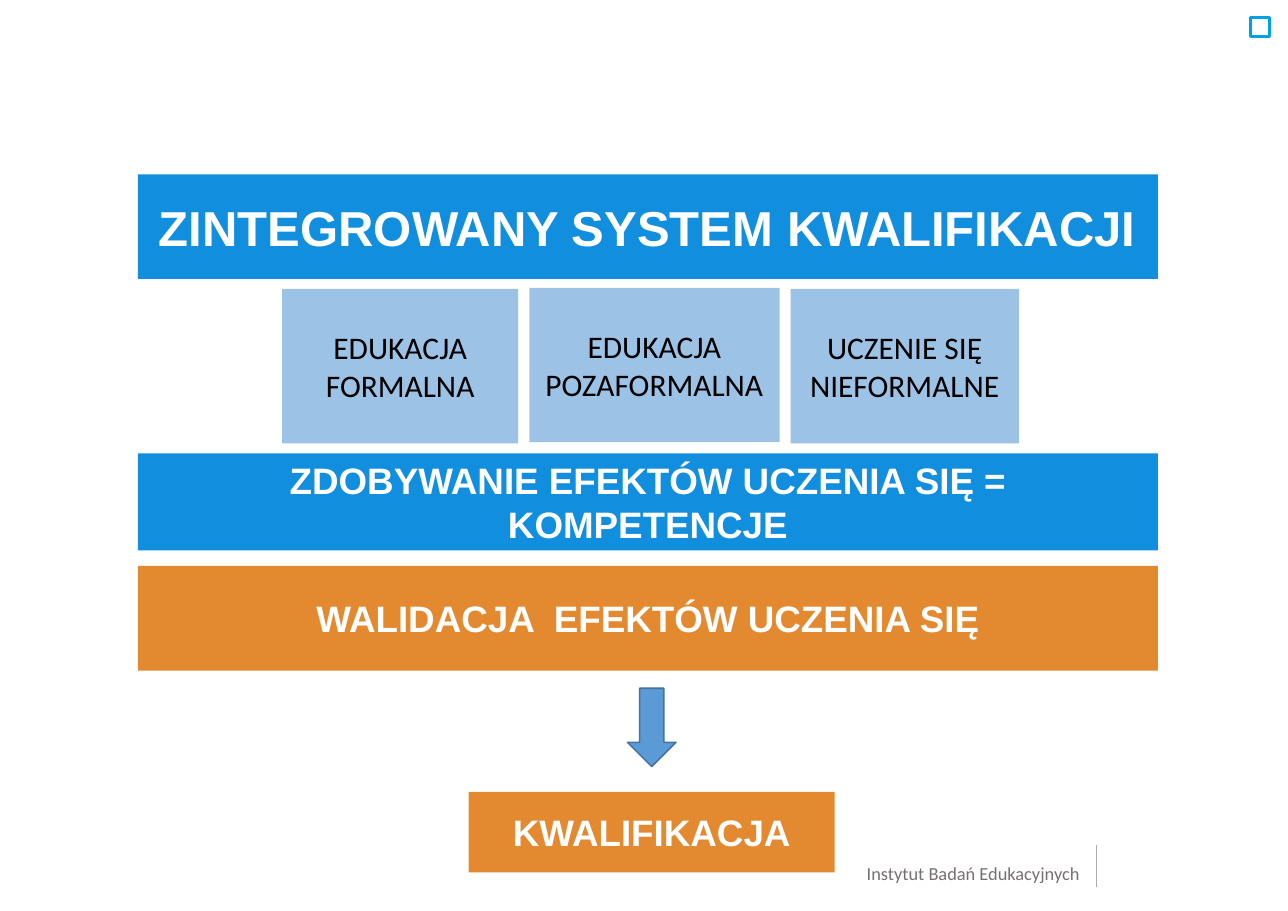
import pptx
import pptx.util
import pptx.dml.color
import pptx.enum.shapes
import pptx.enum.text
import lxml.etree

Inches = pptx.util.Inches
Pt = pptx.util.Pt
SHAPES = pptx.enum.shapes.MSO_SHAPE

BLUE, LIGHT_BLUE, ORANGE, WHITE, BLACK = "118EDD", "9CC2E5", "E38A31", "FFFFFF", "000000"
BAND_LEFT, BAND_WIDTH = 1.25, 9.25
HEADING = {"name": "Arial", "bold": True}
LABEL = {"name": "Calibri", "size": Pt(20.5)}


def color(value):
    return pptx.dml.color.RGBColor.from_string(value)


def write(box, text, ink, font, align):
    para = box.text_frame.paragraphs[0]
    para.alignment = align
    span = para.add_run()
    span.text = text
    span.font.color.rgb = color(ink)
    for name, value in font.items():
        setattr(span.font, name, value)


deck = pptx.Presentation()
deck.slide_width, deck.slide_height = Inches(11.68), Inches(8.26)
page = deck.slides.add_slide(deck.slide_layouts[6])

footer = page.shapes.add_textbox(Inches(7.86), Inches(7.82), Inches(1.95), Inches(0.21))
for side in ("left", "top", "right", "bottom"):
    setattr(footer.text_frame, f"margin_{side}", 0)
write(footer, "Instytut Badań Edukacyjnych", "767171",
      {"name": "Calibri", "size": Pt(12)}, pptx.enum.text.PP_ALIGN.LEFT)

divider = page.shapes.add_connector(
    pptx.enum.shapes.MSO_CONNECTOR.STRAIGHT, Inches(9.94), Inches(8.04), Inches(9.94), Inches(7.66))
divider.line.color.rgb = color("AFABAB")
divider.line.width = Pt(0.5)
lxml.etree.SubElement(divider._element.spPr, pptx.oxml.ns.qn("a:effectLst"))

blocks = [
    ("EDUKACJA FORMALNA", 2.56, 2.62, 2.14, 1.4, LIGHT_BLUE, BLACK, LABEL),
    ("EDUKACJA POZAFORMALNA", 4.8, 2.61, 2.27, 1.4, LIGHT_BLUE, BLACK, LABEL),
    ("UCZENIE SIĘ NIEFORMALNE", 7.17, 2.62, 2.07, 1.4, LIGHT_BLUE, BLACK, LABEL),
    ("WALIDACJA  EFEKTÓW UCZENIA SIĘ", BAND_LEFT, 5.13, BAND_WIDTH, 0.95,
     ORANGE, WHITE, {**HEADING, "size": Pt(24)}),
    ("ZDOBYWANIE EFEKTÓW UCZENIA SIĘ = KOMPETENCJE", BAND_LEFT, 4.11, BAND_WIDTH, 0.88,
     BLUE, WHITE, {**HEADING, "size": Pt(24)}),
    ("ZINTEGROWANY SYSTEM KWALIFIKACJI", BAND_LEFT, 1.58, BAND_WIDTH, 0.95,
     BLUE, WHITE, {**HEADING, "size": Pt(32)}),
    ("KWALIFIKACJA", 4.25, 7.18, 3.32, 0.73, ORANGE, WHITE, {**HEADING, "size": Pt(24)}),
]
for text, left, top, width, height, fill, ink, font in blocks:
    box = page.shapes.add_shape(
        SHAPES.RECTANGLE, Inches(left), Inches(top), Inches(width), Inches(height))
    box.shadow.inherit = False
    box.fill.solid()
    box.fill.fore_color.rgb = color(fill)
    box.line.fill.background()
    box.text_frame.word_wrap = True
    box.text_frame.vertical_anchor = pptx.enum.text.MSO_ANCHOR.MIDDLE
    write(box, text, ink, font, pptx.enum.text.PP_ALIGN.CENTER)

outlined = [
    (SHAPES.RECTANGLE, 11.34, 0.16, 0.17, 0.17, WHITE, "00A1E4", 2),
    (SHAPES.DOWN_ARROW, 5.69, 6.24, 0.44, 0.71, "5B9BD5", "43739E", 1),
]
for kind, left, top, width, height, fill, edge, weight in outlined:
    mark = page.shapes.add_shape(kind, Inches(left), Inches(top), Inches(width), Inches(height))
    mark.shadow.inherit = False
    mark.fill.solid()
    mark.fill.fore_color.rgb = color(fill)
    mark.line.color.rgb = color(edge)
    mark.line.width = Pt(weight)

deck.save("out.pptx")
